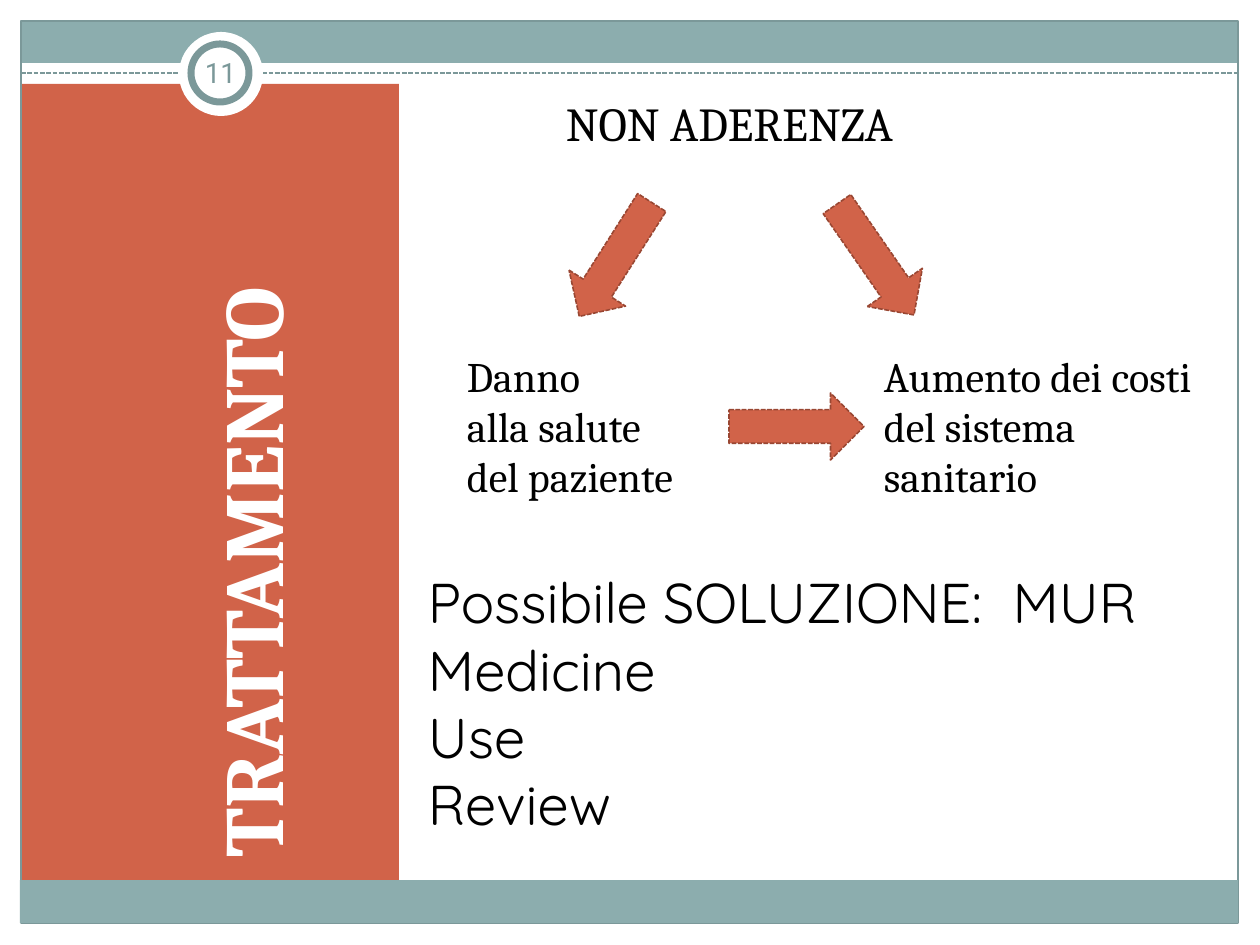
from pptx import Presentation
from pptx.dml.color import RGBColor
from pptx.enum.dml import MSO_LINE as DASH
from pptx.enum.shapes import MSO_CONNECTOR, MSO_SHAPE as SHAPE
from pptx.enum.text import MSO_ANCHOR as ANCHOR, MSO_AUTO_SIZE, PP_ALIGN as ALIGN
from pptx.oxml.ns import qn
from pptx.util import Emu, Pt
from lxml import etree

THEME = {
    "white": "FFFFFF", "black": "000000", "band": "8CADAE", "rule": "7B9899",
    "accent": "D16349", "accent_edge": "994733",
    "serif": "Cambria", "sans": "Quicksand", "number": "Roboto",
    "title": 48, "heading": 27, "label": 24, "solution": 32, "page": 16,
}
PX = 914400 / 126


def add_shape(kind, box, fill=None, line=None, width=0.75, dash=None, rotation=0):
    sp = s.shapes.add_shape(kind, *[Emu(round(v * PX)) for v in box])
    sp.shadow.inherit = False
    sp.rotation = rotation
    if fill:
        sp.fill.solid()
        sp.fill.fore_color.rgb = RGBColor.from_string(THEME[fill])
    else:
        sp.fill.background()
    if line:
        sp.line.color.rgb = RGBColor.from_string(THEME[line])
        sp.line.width = Pt(width)
        if dash:
            sp.line.dash_style = dash
    else:
        sp.line.fill.background()
    return sp


def set_text(sp, box, lines, font, size, color="black", inset=6, bold=False,
             align=ALIGN.LEFT, anchor=ANCHOR.TOP):
    for name, v in zip(("left", "top", "width", "height"), box):
        setattr(sp, name, Emu(round(v * PX)))
    tf = sp.text_frame
    frame = {"word_wrap": True, "auto_size": MSO_AUTO_SIZE.NONE, "vertical_anchor": anchor}
    frame |= {f"margin_{side}": Emu(round(inset * PX))
              for side in ("left", "top", "right", "bottom")}
    for name, v in frame.items():
        setattr(tf, name, v)
    for i, line in enumerate(lines):
        p = tf.paragraphs[0] if i == 0 else tf.add_paragraph()
        p.alignment = align
        r = p.add_run()
        r.text = line
        for name, v in {"name": THEME[font], "size": Pt(THEME[size]), "bold": bold}.items():
            setattr(r.font, name, v)
        r.font.color.rgb = RGBColor.from_string(THEME[color])
    return tf


prs = Presentation()
prs.slide_width, prs.slide_height = Emu(round(1260 * PX)), Emu(round(945 * PX))
s = prs.slides.add_slide(prs.slide_layouts[5])

# Bands, white margins and side panel
for box, fill in [
    ((21, 21, 1217, 42), "band"),
    ((0, 924, 1260, 21), "white"),
    ((1239, 0, 21, 945), "white"),
    ((0, 0, 1260, 17), "white"),
    ((0, 0, 21, 945), "white"),
    ((21, 84, 378, 809), "accent"),
]:
    add_shape(SHAPE.RECTANGLE, box, fill)

# Page border and dashed rule
add_shape(SHAPE.RECTANGLE, (21, 21, 1217, 902), line="rule")
rule = s.shapes.add_connector(MSO_CONNECTOR.STRAIGHT,
                              *[Emu(round(v * PX)) for v in (21, 73, 1239, 73)])
rule.line.color.rgb = RGBColor.from_string(THEME["rule"])
rule.line.width = Pt(0.9)
rule.line.dash_style = DASH.SQUARE_DOT
etree.SubElement(rule._element.spPr, qn("a:effectLst"))

# Page number badge and bottom band
add_shape(SHAPE.OVAL, (179, 32, 84, 84), "white")
add_shape(SHAPE.OVAL, (191, 44, 58, 58), "white", "rule", 4)
add_shape(SHAPE.RECTANGLE, (20, 880, 1218, 43), "band")

# Title, turned to read upwards on the side panel
title = s.shapes.title
tf = set_text(title, (-168, 318, 752, 328), ["TRATTAMENTO"], "serif", "title", "white",
              inset=0, bold=True, anchor=ANCHOR.BOTTOM)
tf.margin_bottom = Emu(round(72 * PX))
title.rotation = 270
s.shapes._spTree.append(title._element)

# Arrows between the cause and its effects
for kind, box, rotation in [
    (SHAPE.DOWN_ARROW, (582, 192, 67, 135), 32.5),
    (SHAPE.DOWN_ARROW, (842, 192, 67, 135), 325.2),
    (SHAPE.RIGHT_ARROW, (729, 393, 135, 67), 0),
]:
    add_shape(kind, box, "accent", "accent_edge", 0.9, DASH.SQUARE_DOT, rotation)

# Texts
for box, lines, font, size, more in [
    ((431, 94, 777, 427), ["NON ADERENZA"], "serif", "heading", {"inset": 0}),
    ((461, 344, 237, 155), ["Danno", "alla salute", "del paziente"], "serif", "label", {}),
    ((878, 344, 359, 155), ["Aumento dei costi", "del sistema", "sanitario"],
     "serif", "label", {}),
    ((422, 562, 794, 272), ["Possibile SOLUZIONE:  MUR", "Medicine", "Use", "Review"],
     "sans", "solution", {}),
    ((189, 50, 63, 45), ["11"], "number", "page",
     {"color": "rule", "align": ALIGN.CENTER, "anchor": ANCHOR.MIDDLE}),
]:
    tf = set_text(s.shapes.add_textbox(0, 0, 0, 0), box, lines, font, size, **more)
    if size == "heading":
        tf.margin_left = Emu(round(135 * PX))

prs.save("out.pptx")
